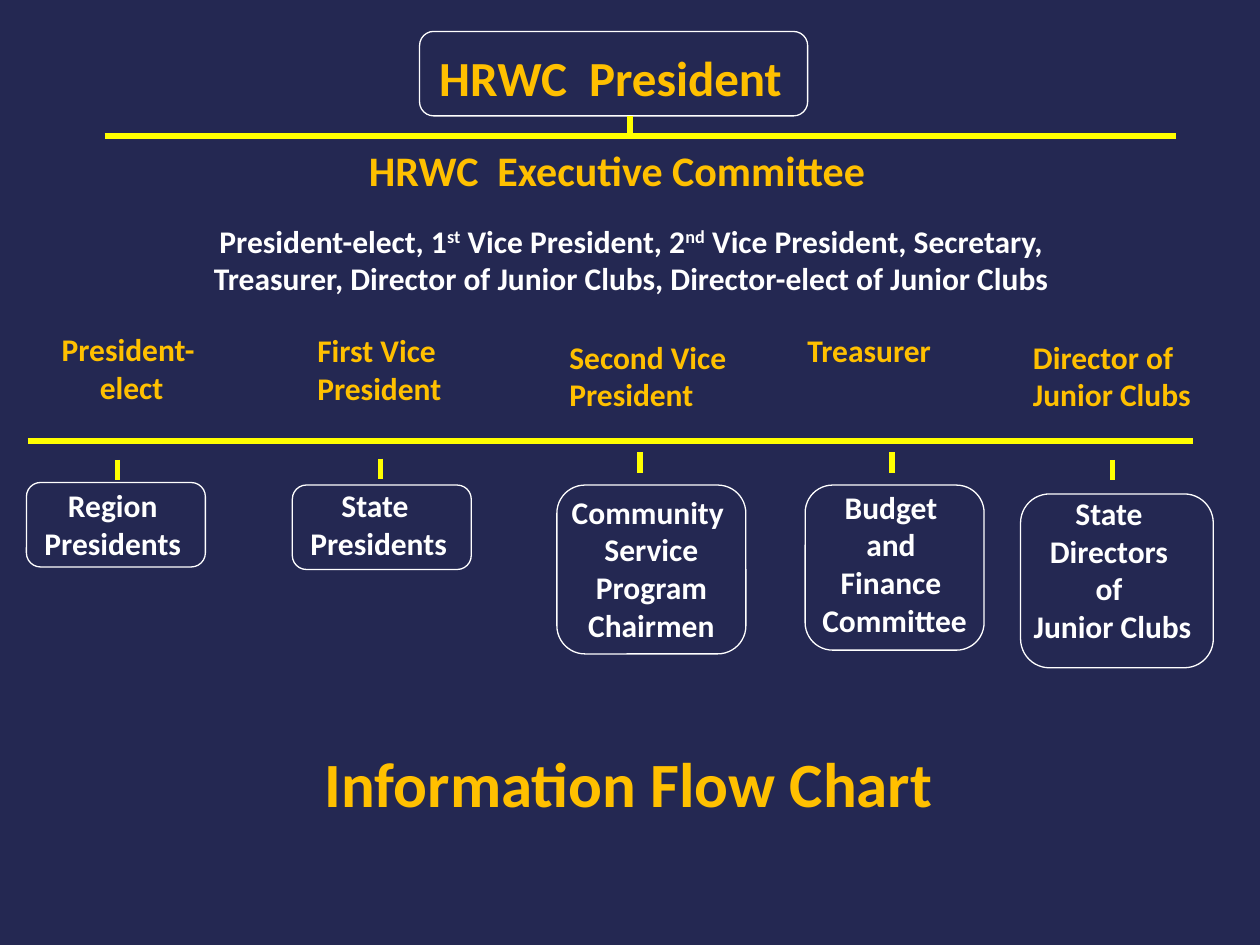
from dataclasses import dataclass

from lxml import etree
from pptx import Presentation
from pptx.dml.color import RGBColor
from pptx.enum import shapes, text
from pptx.oxml import ns
from pptx.util import Inches, Pt

COLORS = {"navy": "242852", "gold": "FFC000", "yellow": "FFFF00", "white": "FFFFFF"}
LEFT, CENTER = text.PP_ALIGN.LEFT, text.PP_ALIGN.CENTER


@dataclass
class Branch:
    """An officer and the group reached; offsets count from the card corner."""
    card: tuple
    officer: str
    officer_box: tuple
    officer_align: int
    tick: tuple
    group: str
    group_box: tuple
    group_wrap: bool = False


BRANCHES = [
    Branch((0.21, 3.83, 1.42, 0.67), "President- \nelect", (0.17, -1.26, 1.33, 0.71), CENTER,
           (0.72, -0.18), "Region\vPresidents", (0.04, -0.02, 1.29, 0.71)),
    Branch((2.32, 3.85, 1.42, 0.67), "First Vice\nPresident", (0.1, -1.27, 1.23, 0.7), LEFT,
           (0.7, -0.21), "State \nPresidents", (0.04, -0.04, 1.29, 0.71)),
    Branch((4.42, 3.85, 1.5, 1.34), "Second Vice\nPresident", (0, -1.22, 1.51, 0.7), LEFT,
           (0.66, -0.26), "Community \nService\nProgram\nChairmen", (-0.21, 0.01, 1.92, 1.31), True),
    Branch((6.39, 3.85, 1.42, 1.31), "Treasurer", (-0.08, -1.27, 1.23, 0.4), LEFT,
           (0.69, -0.26), "Budget \vand \vFinance \vCommittee", (0.03, -0.03, 1.36, 1.62)),
    Branch((8.1, 3.92, 1.53, 1.38), "Director of\nJunior Clubs", (0, -1.29, 1.46, 0.71), LEFT,
           (0.73, -0.27), "State \vDirectors \vof \vJunior Clubs", (0, -0.05, 1.46, 1.31)),
]


def rgb(name):
    """Return the named colour."""
    return RGBColor.from_string(COLORS[name])


def style_text(frame, size, color, align):
    """Format every paragraph of a text frame alike."""
    for paragraph in frame.paragraphs:
        paragraph.alignment = align
        font = paragraph.font
        font.name, font.size, font.bold = "Calibri", Pt(size), True
        font.color.rgb = rgb(color)


def add_label(slide, box, wording, size=18, color="gold", align=CENTER, wrap=False):
    """Add bold text in a box and return its frame."""
    frame = slide.shapes.add_textbox(*map(Inches, box)).text_frame
    frame.word_wrap = wrap
    frame.text = wording
    style_text(frame, size, color, align)
    return frame


def add_card(slide, box):
    """Add an unfilled rounded outline."""
    card = slide.shapes.add_shape(shapes.MSO_SHAPE.ROUNDED_RECTANGLE, *map(Inches, box))
    card.shadow.inherit = False
    card.fill.background()
    card.line.color.rgb = rgb("white")
    card.line.width = Pt(0.75)


def add_rule(slide, x1, y1, x2, y2):
    """Add a thick yellow line."""
    rule = slide.shapes.add_connector(shapes.MSO_CONNECTOR.STRAIGHT, *map(Inches, (x1, y1, x2, y2)))
    rule.line.color.rgb = rgb("yellow")
    rule.line.width = Pt(3)
    etree.SubElement(rule._element.spPr, ns.qn("a:effectLst"))


def add_title(slide, box):
    """Place and format the slide title."""
    title = slide.shapes.title
    title.left, title.top, title.width, title.height = map(Inches, box)
    frame = title.text_frame
    frame.text = "Information Flow Chart"
    frame.word_wrap = False
    frame.auto_size = text.MSO_AUTO_SIZE.NONE
    frame.vertical_anchor = text.MSO_ANCHOR.TOP
    style_text(frame, 36, "gold", CENTER)


def add_president(slide, box):
    """Add the president's card and the stem below it."""
    left, top, width, height = box
    add_card(slide, box)
    add_label(slide, (left - 0.28, top + 0.08, 3.59, 0.57), "HRWC  President", 28, wrap=True)
    stem = left + 1.67
    add_rule(slide, stem, top + height, stem, top + height + 0.16)


def add_committee(slide, box):
    """Add the committee's rule, heading and list of members."""
    left, top, width, height = box
    add_rule(slide, left, top, left + width, top)
    add_label(slide, (left + 2, top + 0.02, 4.8, 0.5), "HRWC  Executive Committee", 24,
              align=LEFT, wrap=True)
    members = add_label(slide, (left + 0.74, top + height - 0.71, 6.88, 0.71),
                        "\nTreasurer, Director of Junior Clubs, Director-elect of Junior Clubs",
                        color="white")
    pieces = ["President-elect, 1", "st", " Vice President, 2", "nd", " Vice President, Secretary,"]
    for piece in pieces:
        run = members.paragraphs[0].add_run()
        run.text = piece
        if piece in ("st", "nd"):
            run.font._element.set("baseline", "30000")


def add_branch(slide, branch):
    """Add an officer, the tick and the card of the group below."""
    left, top, width, height = branch.card

    def from_card(box):
        """Shift a box by the card's corner."""
        return (left + box[0], top + box[1], *box[2:])

    add_label(slide, from_card(branch.officer_box), branch.officer, align=branch.officer_align)
    add_card(slide, branch.card)
    add_label(slide, from_card(branch.group_box), branch.group, color="white", wrap=branch.group_wrap)
    tick_x, tick_y = from_card(branch.tick)
    add_rule(slide, tick_x, tick_y, tick_x, tick_y + 0.16)


def main():
    """Build and save the flow chart slide."""
    deck = Presentation()
    deck.slide_width, deck.slide_height = Inches(10), Inches(7.5)
    slide = deck.slides.add_slide(deck.slide_layouts[5])
    slide.background.fill.solid()
    slide.background.fill.fore_color.rgb = rgb("navy")
    add_title(slide, (2.45, 5.86, 5.08, 0.71))
    add_president(slide, (3.33, 0.25, 3.08, 0.67))
    add_committee(slide, (0.83, 1.08, 8.5, 1.34))
    add_rule(slide, 0.22, 3.5, 9.47, 3.5)
    for branch in BRANCHES:
        add_branch(slide, branch)
    deck.save("out.pptx")


if __name__ == "__main__":
    main()
